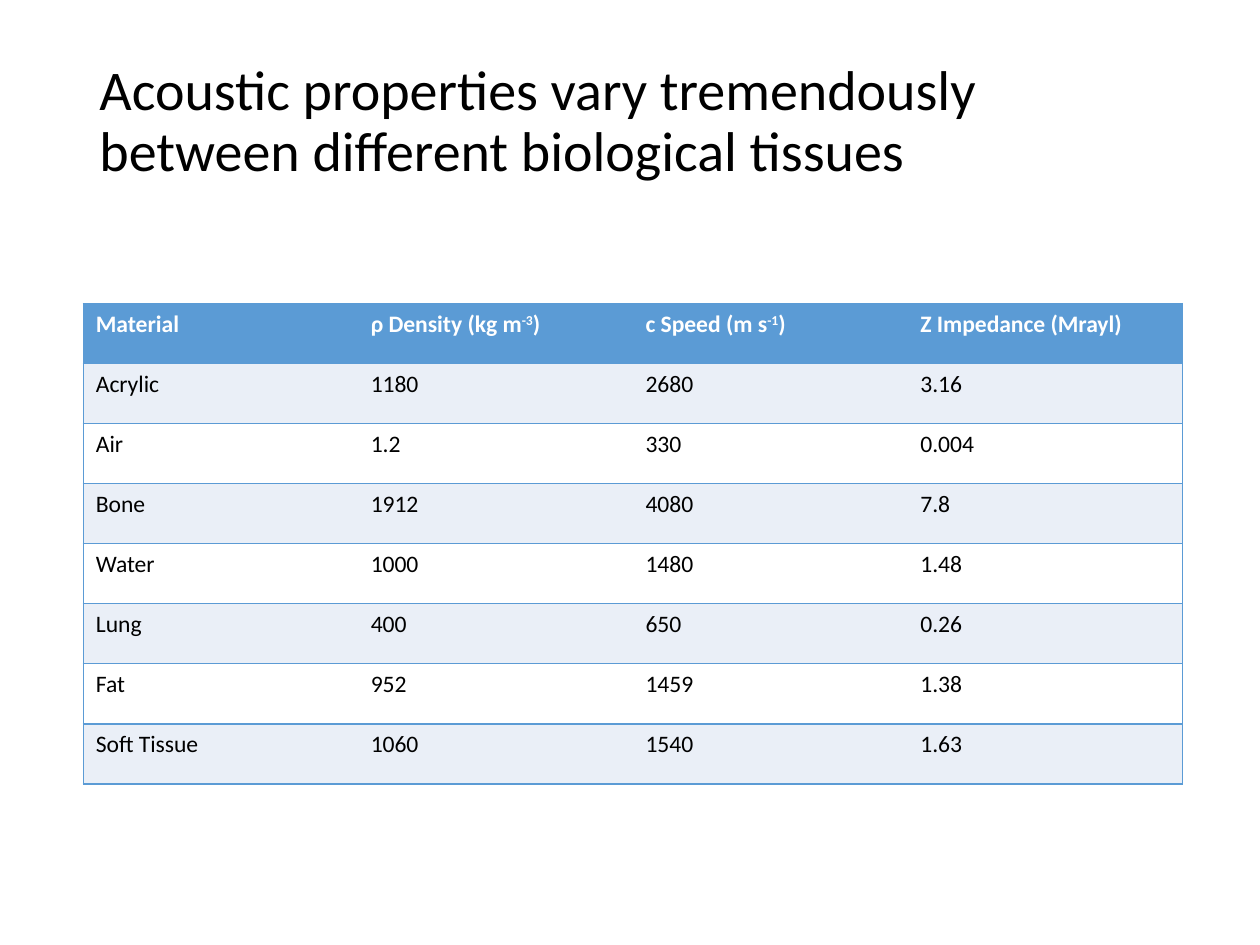
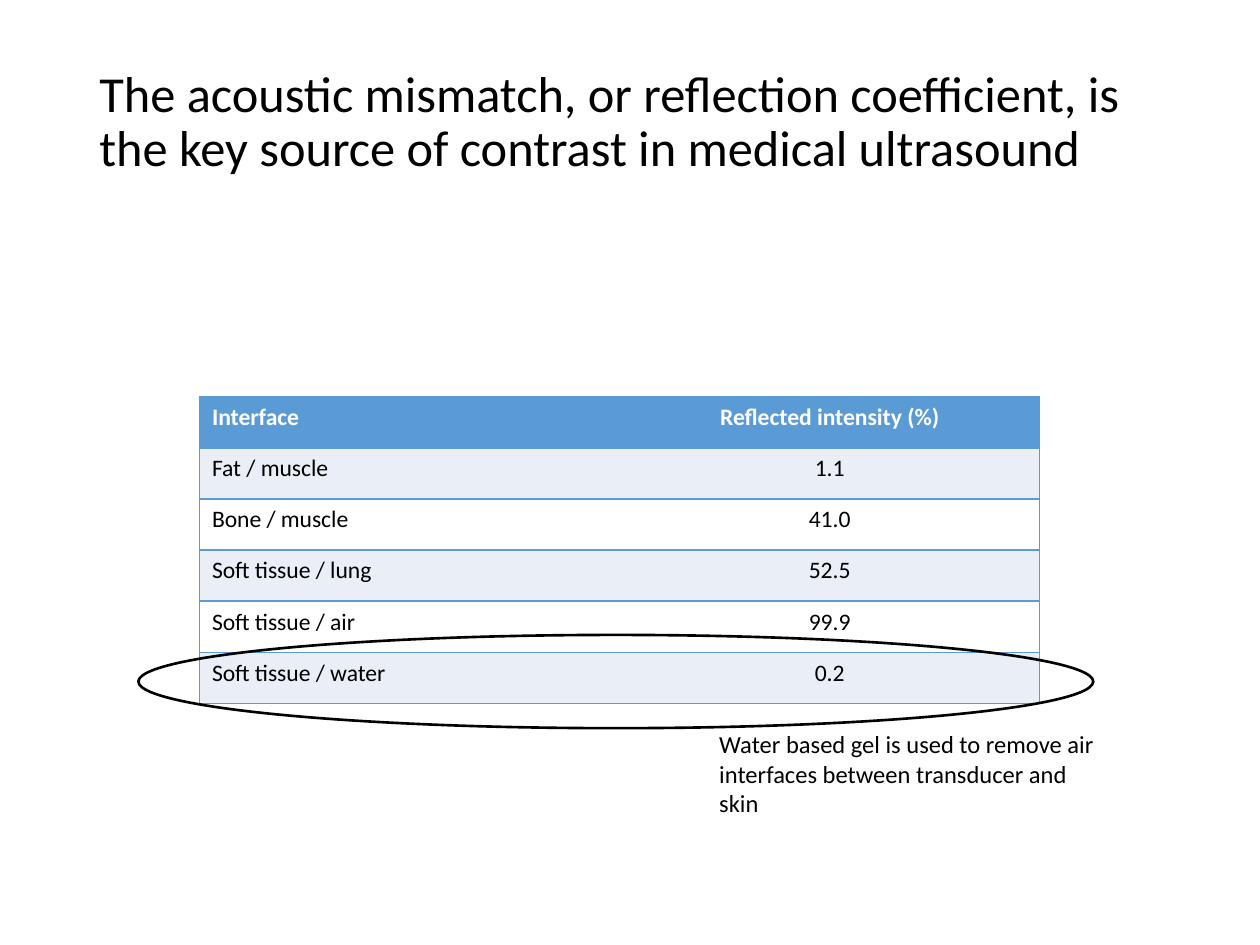
from pptx import Presentation
from pptx import util as u
from pptx.dml.color import RGBColor
from pptx.enum import shapes, text
from pptx.oxml.ns import qn
from lxml import etree

BLACK = RGBColor(0x00, 0x00, 0x00)
WHITE = RGBColor(0xFF, 0xFF, 0xFF)
BLUE = RGBColor(0x5B, 0x9B, 0xD5)
PALE_BLUE = RGBColor(0xEA, 0xEF, 0xF7)
FONT = "Calibri"
CELL_SIZE = 13.5
SUPERSCRIPT = "30000"

TISSUES = [
    ["Material", ("ρ Density (kg m", "-3", ")"), ("c Speed (m s", "-1", ")"), "Z Impedance (Mrayl)"],
    ["Acrylic", "1180", "2680", "3.16"],
    ["Air", "1.2", "330", "0.004"],
    ["Bone", "1912", "4080", "7.8"],
    ["Water", "1000", "1480", "1.48"],
    ["Lung", "400", "650", "0.26"],
    ["Fat", "952", "1459", "1.38"],
    ["Soft Tissue", "1060", "1540", "1.63"],
]
INTERFACES = [
    ["Interface", "Reflected intensity (%)"],
    ["Fat / muscle", "1.1"],
    ["Bone / muscle", "41.0"],
    ["Soft tissue / lung", "52.5"],
    ["Soft tissue / air", "99.9"],
    ["Soft tissue / water", "0.2"],
]
GEL_NOTE = ["Water based gel is used to remove air", "interfaces between transducer and skin"]


def add_run(p, words, size, color=BLACK, bold=False):
    r = p.add_run()
    r.text = words
    r.font.name = FONT
    r.font.size = u.Pt(size)
    r.font.color.rgb = color
    r.font.bold = bold
    return r


def add_titled_slide(prs, title, size):
    s = prs.slides.add_slide(prs.slide_layouts[5])
    sp = s.shapes.title
    sp.left, sp.top, sp.width, sp.height = u.Cm(1.75), u.Cm(1.02), u.Cm(21.9), u.Cm(2.92)
    tf = sp.text_frame
    tf.word_wrap = True
    tf.auto_size = text.MSO_AUTO_SIZE.NONE
    tf.vertical_anchor = text.MSO_ANCHOR.MIDDLE
    p = tf.paragraphs[0]
    p.alignment = text.PP_ALIGN.LEFT
    p.line_spacing = 0.9
    add_run(p, title, size)
    return s


def set_borders(cell, is_first, is_last):
    tc_pr = cell._tc.get_or_add_tcPr()
    for side, drawn in (("L", is_first), ("R", is_last), ("T", True), ("B", True)):
        ln = etree.SubElement(tc_pr, qn(f"a:ln{side}"), w=str(u.Pt(1)))
        if drawn:
            fill = etree.SubElement(ln, qn("a:solidFill"))
            etree.SubElement(fill, qn("a:srgbClr"), val=str(BLUE))
        else:
            etree.SubElement(ln, qn("a:noFill"))


def fill_cell(cell, content, is_header, alignment):
    p = cell.text_frame.paragraphs[0]
    p.alignment = alignment
    parts = (content,) if isinstance(content, str) else content
    for i, part in enumerate(parts):
        r = add_run(p, part, CELL_SIZE, WHITE if is_header else BLACK, is_header)
        if i == 1:
            r.font._element.set("baseline", SUPERSCRIPT)


def add_data_table(s, rows, left, top, col_width, row_height, value_alignment):
    n_rows, n_cols = len(rows), len(rows[0])
    table = s.shapes.add_table(n_rows, n_cols, u.Cm(left), u.Cm(top),
                               u.Cm(col_width * n_cols), u.Cm(row_height * n_rows)).table
    table.horz_banding = False
    for column in table.columns:
        column.width = u.Cm(col_width)
    for i, row in enumerate(rows):
        table.rows[i].height = u.Cm(row_height)
        color = BLUE if i == 0 else (WHITE, PALE_BLUE)[i % 2]
        for j, content in enumerate(row):
            cell = table.cell(i, j)
            set_borders(cell, j == 0, j == n_cols - 1)
            cell.fill.solid()
            cell.fill.fore_color.rgb = color
            fill_cell(cell, content, i == 0, value_alignment if j else text.PP_ALIGN.LEFT)


def add_highlight(group, left, top, width, height):
    sp = group.shapes.add_shape(shapes.MSO_SHAPE.OVAL, u.Cm(left), u.Cm(top), u.Cm(width), u.Cm(height))
    sp.shadow.inherit = False
    sp.fill.background()
    sp.line.color.rgb = BLACK
    sp.line.width = u.Pt(1.5)


def add_note(group, lines, left, top, width, height):
    tf = group.shapes.add_textbox(u.Cm(left), u.Cm(top), u.Cm(width), u.Cm(height)).text_frame
    tf.word_wrap = True
    for i, line in enumerate(lines):
        p = tf.add_paragraph() if i else tf.paragraphs[0]
        add_run(p, line, 14)


def main():
    prs = Presentation()
    prs.slide_width, prs.slide_height = u.Cm(25.4), u.Cm(19.05)

    s = add_titled_slide(prs, "Acoustic properties vary tremendously between different biological tissues", 32)
    add_data_table(s, TISSUES, 1.68, 6.12, 5.54, 1.21, text.PP_ALIGN.LEFT)

    s = add_titled_slide(prs, "The acoustic mismatch, or reflection coefficient, is the key source "
                              "of contrast in medical ultrasound", 28.8)
    add_data_table(s, INTERFACES, 4.02, 8, 8.47, 1.03, text.PP_ALIGN.CENTER)
    water_callout = s.shapes.add_group_shape()
    add_highlight(water_callout, 2.79, 12.8, 19.25, 1.88)
    add_note(water_callout, GEL_NOTE, 14.25, 14.58, 8.38, 1.45)

    prs.save("out.pptx")


if __name__ == "__main__":
    main()
